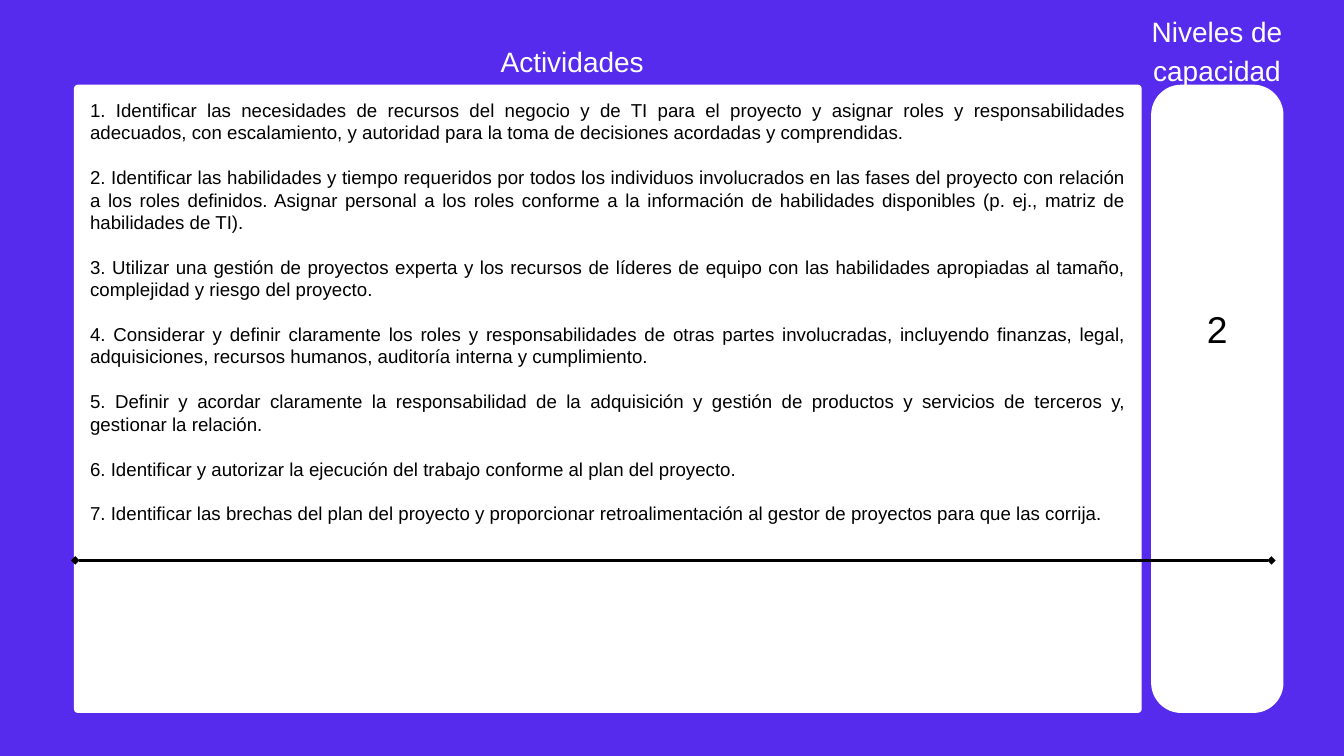
from lxml.etree import SubElement
from pptx import Presentation
from pptx.dml.color import RGBColor
from pptx.enum.shapes import MSO_CONNECTOR, MSO_SHAPE
from pptx.enum.text import PP_ALIGN
from pptx.oxml.ns import qn
from pptx.util import Inches, Pt

VIOLET = RGBColor(0x56, 0x2B, 0xED)
WHITE = RGBColor(0xFF, 0xFF, 0xFF)
BLACK = RGBColor(0x00, 0x00, 0x00)
FONT = "Arial"

# Content
ACTIVITIES = [
    "Identificar las necesidades de recursos del negocio y de TI para el proyecto y asignar roles y "
    "responsabilidades adecuados, con escalamiento, y autoridad para la toma de decisiones acordadas "
    "y comprendidas.",
    "Identificar las habilidades y tiempo requeridos por todos los individuos involucrados en las fases "
    "del proyecto con relación a los roles definidos. Asignar personal a los roles conforme a la "
    "información de habilidades disponibles (p. ej., matriz de habilidades de TI).",
    "Utilizar una gestión de proyectos experta y los recursos de líderes de equipo con las habilidades "
    "apropiadas al tamaño, complejidad y riesgo del proyecto.",
    "Considerar y definir claramente los roles y responsabilidades de otras partes involucradas, "
    "incluyendo finanzas, legal, adquisiciones, recursos humanos, auditoría interna y cumplimiento.",
    "Definir y acordar claramente la responsabilidad de la adquisición y gestión de productos y "
    "servicios de terceros y, gestionar la relación.",
    "Identificar y autorizar la ejecución del trabajo conforme al plan del proyecto.",
    "Identificar las brechas del plan del proyecto y proporcionar retroalimentación al gestor de "
    "proyectos para que las corrija.",
]
NUMBERED = [f"{number}. {text}" for number, text in enumerate(ACTIVITIES, 1)]

# Panels: left, width, corner radius
PANEL_TOP, PANEL_HEIGHT = 1.26, 9.35
PANELS = [(1.1, 15.89, 0.06), (17.13, 1.97, 0.45)]

# Texts: paragraphs, (left, top, width, height), size, line spacing, gap after, alignment, colour
TEXTS = [
    (["Actividades"], (7.37, 0.58, 2.29, 0.55), 30, 42, 0, PP_ALIGN.CENTER, WHITE),
    (["Niveles de capacidad"], (16.49, 0.13, 3.24, 1.13), 30, 42, 0, PP_ALIGN.CENTER, WHITE),
    (NUMBERED, (1.34, 1.47, 15.41, 6.72), 20, 24, 24, PP_ALIGN.JUSTIFY, BLACK),
    (["2"], (17.96, 4.45, 0.31, 0.73), 40, 56, 0, PP_ALIGN.CENTER, BLACK),
]

# Divider: left, right, height on the page
DIVIDER = (1.12, 18.92, 8.34)


def add_panel(page, left, width, radius):
    panel = page.shapes.add_shape(
        MSO_SHAPE.ROUNDED_RECTANGLE,
        Inches(left), Inches(PANEL_TOP), Inches(width), Inches(PANEL_HEIGHT))
    panel.adjustments[0] = radius / min(width, PANEL_HEIGHT)
    panel.shadow.inherit = False
    panel.fill.solid()
    panel.fill.fore_color.rgb = WHITE
    panel.line.fill.background()


def add_text(page, paragraphs, place, size, spacing, gap, alignment, colour):
    box = page.shapes.add_textbox(*map(Inches, place))
    frame = box.text_frame
    frame.word_wrap = True
    frame.margin_left = frame.margin_right = frame.margin_top = frame.margin_bottom = 0
    for index, text in enumerate(paragraphs):
        para = frame.add_paragraph() if index else frame.paragraphs[0]
        para.alignment = alignment
        para.line_spacing = Pt(spacing)
        para.space_after = Pt(gap)
        span = para.add_run()
        span.text = text
        span.font.name = FONT
        span.font.size = Pt(size)
        span.font.color.rgb = colour


def add_divider(page, left, right, height):
    divider = page.shapes.add_connector(
        MSO_CONNECTOR.STRAIGHT, Inches(left), Inches(height), Inches(right), Inches(height))
    divider.line.color.rgb = BLACK
    divider.line.width = Pt(3)
    outline = divider.line._get_or_add_ln()
    for end in ("a:headEnd", "a:tailEnd"):
        SubElement(outline, qn(end), type="diamond")
    SubElement(divider._element.spPr, qn("a:effectLst"))


def main():
    deck = Presentation()
    deck.slide_width, deck.slide_height = Inches(20), Inches(11.25)
    page = deck.slides.add_slide(deck.slide_layouts[6])
    page.background.fill.solid()
    page.background.fill.fore_color.rgb = VIOLET

    for panel in PANELS:
        add_panel(page, *panel)
    for text in TEXTS:
        add_text(page, *text)
    add_divider(page, *DIVIDER)

    deck.save("out.pptx")


if __name__ == "__main__":
    main()
